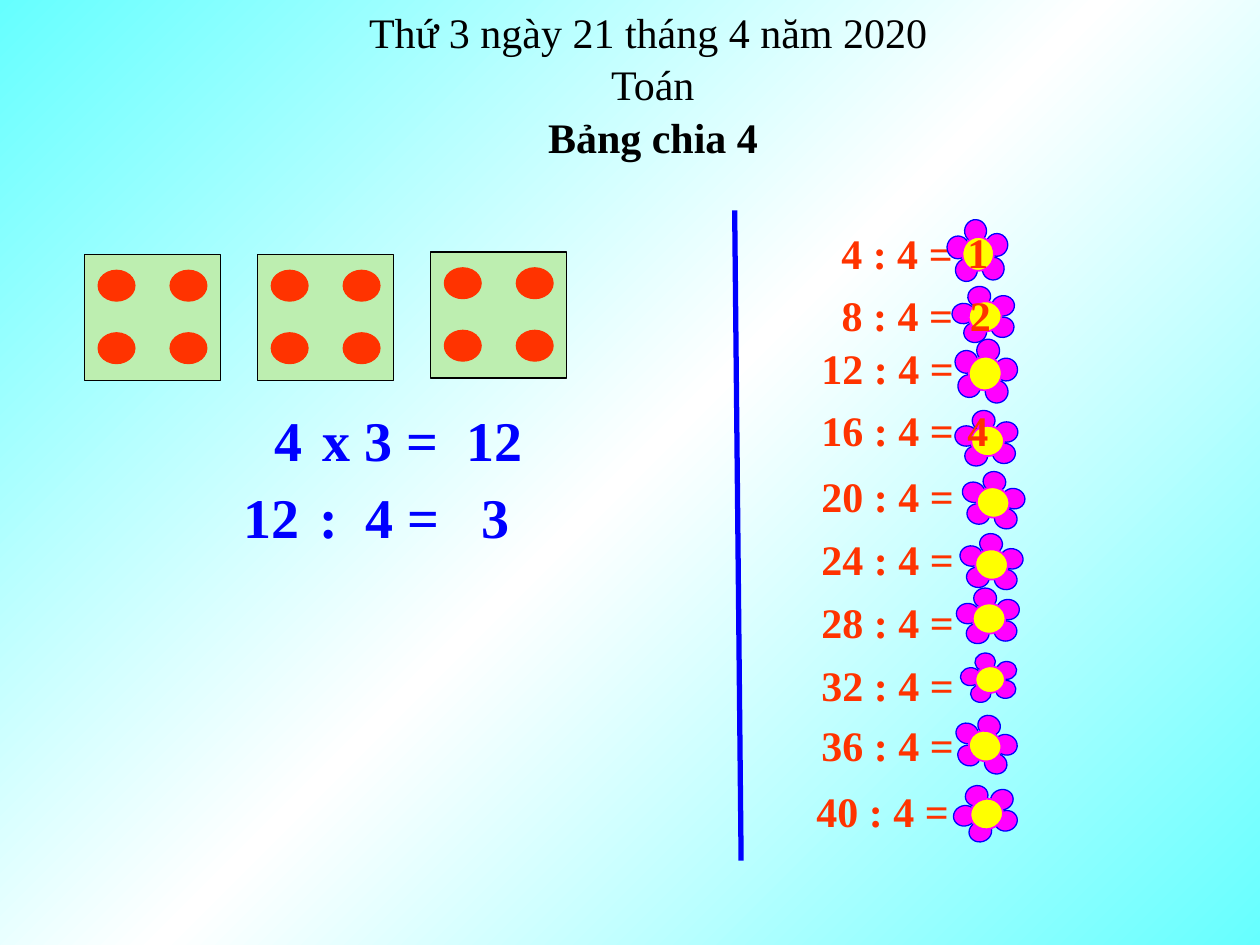
from copy import deepcopy
from dataclasses import dataclass
from itertools import product
from math import cos, radians, sin

from pptx import Presentation
from pptx.dml.color import RGBColor as Rgb
from pptx.enum.shapes import MSO_CONNECTOR as Link, MSO_SHAPE as Kind
from pptx.enum.text import MSO_AUTO_SIZE as Fit, PP_ALIGN as Align
from pptx.oxml.ns import qn
from pptx.oxml.xmlchemy import OxmlElement as Node
from pptx.util import Cm, Pt

HUES = {
    "aqua": "66FFFF", "white": "FFFFFF", "black": "000000", "blue": "0000FF",
    "red": "FF3300", "pink": "FF00FF", "yellow": "FFFF00", "green": "BDEEB0",
}
FONT = "Times New Roman"
PETALS = [(0.38, -0.18), (0.33, 0.25), (-0.08, -0.41), (-0.43, -0.1), (-0.23, 0.3)]


@dataclass
class Label:
    text: str
    left: float
    top: float
    width: float
    hue: str = "red"
    size: int = 24
    bold: bool = True
    wrap: bool = False
    tall: float = 1.27
    align: Align = Align.LEFT
    tail: str = ""  # follows the text after a narrow gap


@dataclass
class Flower:
    x: float
    y: float
    turn: float = 0
    wide: float = 1
    high: float = 1


@dataclass
class Card:
    left: float
    top: float


def tint(name: str) -> Rgb:
    return Rgb.from_string(HUES[name])


def write(slide, item: Label) -> None:
    box = slide.shapes.add_textbox(
        Cm(item.left), Cm(item.top), Cm(item.width), Cm(item.tall))
    frame = box.text_frame
    for key, val in {"word_wrap": item.wrap, "auto_size": Fit.SHAPE_TO_FIT_TEXT}.items():
        setattr(frame, key, val)
    para = frame.paragraphs[0]
    para.alignment = item.align
    parts = [(item.text, item.size)]
    if item.tail:
        parts += [(" ", 14), (item.tail, item.size)]
    for text, size in parts:
        run = para.add_run()
        run.text = text
        style = {"name": FONT, "size": Pt(size), "bold": item.bold}
        for key, val in style.items():
            setattr(run.font, key, val)
        run.font.color.rgb = tint(item.hue)


def block(group, kind: Kind, left: float, top: float, width: float, tall: float,
          fill: str, edge: str, line: float = 0.75, turn: float = 0) -> None:
    shape = group.shapes.add_shape(kind, Cm(left), Cm(top), Cm(width), Cm(tall))
    shape.shadow.inherit = False
    shape.rotation = turn
    shape.fill.solid()
    shape.fill.fore_color.rgb = tint(fill)
    shape.line.color.rgb = tint(edge)
    shape.line.width = Pt(line)


def bloom(slide, item: Flower) -> None:
    group = slide.shapes.add_group_shape()
    c, s = cos(radians(item.turn)), sin(radians(item.turn))

    def disc(dx: float, dy: float, width: float, tall: float, *look) -> None:
        dx, dy = dx * item.wide, dy * item.high
        width, tall = width * item.wide, tall * item.high
        x, y = item.x + dx * c - dy * s, item.y + dx * s + dy * c
        block(group, Kind.OVAL, x - width / 2, y - tall / 2, width, tall,
              *look, turn=item.turn)

    for dx, dy in PETALS:
        disc(dx, dy, 0.46, 0.41, "pink", "blue")
    disc(0, 0, 0.66, 0.61, "yellow", "pink", 1)


def deal(slide, item: Card) -> None:
    group = slide.shapes.add_group_shape()
    block(group, Kind.RECTANGLE, item.left, item.top, 2.74, 2.54, "green", "black")
    for dx, dy in product((0.28, 1.73), (0.32, 1.58)):
        block(group, Kind.OVAL, item.left + dx, item.top + dy, 0.74, 0.62, "red", "red")


def paint(slide) -> None:
    fill = slide.background.fill
    fill.gradient()
    fill.gradient_angle = 315
    stops = slide._element.find(".//" + qn("a:gsLst"))
    stops.append(deepcopy(stops[-1]))
    for stop, pos, hue in zip(fill.gradient_stops, (0, 0.5, 1), ("aqua", "white", "aqua")):
        stop.position = pos
        stop.color.rgb = tint(hue)


def rule(slide, x1: float, y1: float, x2: float, y2: float) -> None:
    line = slide.shapes.add_connector(Link.STRAIGHT, Cm(x1), Cm(y1), Cm(x2), Cm(y2))
    line.line.color.rgb = tint("blue")
    line.line.width = Pt(3)
    line._element.spPr.append(Node("a:effectLst"))


# Division table
SUMS = [
    Label("4 : 4 =", 16.71, 4.47, 2.97, wrap=True),
    Label("8 : 4 = ", 16.64, 5.72, 2.9, wrap=True, align=Align.CENTER),
] + [
    Label(f"{4 * n} : 4 =", left, top, 3.43)
    for n, left, top in [(3, 16.31, 6.78), (4, 16.31, 8.03), (5, 16.31, 9.36),
                         (6, 16.31, 10.63), (7, 16.31, 11.9), (8, 16.31, 13.17),
                         (9, 16.31, 14.38), (10, 16.21, 15.71)]
]
# Answers on the flowers
FOUND = [
    Label(str(n), left, top, 1.14)
    for n, left, top in [(1, 19.25, 4.45), (2, 19.3, 5.72), (4, 19.25, 8.03)]
]
FLOWERS = [
    Flower(19.72, 5.12, 2.9, 0.96, 1.12), Flower(19.86, 6.38, -5.4),
    Flower(19.86, 7.53, 17.3, 1, 1.12), Flower(19.91, 8.89),
    Flower(20.02, 10.13, 14.7), Flower(19.99, 11.38, 9.6),
    Flower(19.94, 12.47), Flower(19.96, 13.7, -4.3, 0.9, 0.88),
    Flower(19.86, 15.04, 22), Flower(19.89, 16.41, -17.8),
]
HEADS = [
    Label("Thứ 3 ngày 21 tháng 4 năm 2020", 7.19, 0, 11.86, "black", bold=False),
    Label("Toán", 12.07, 1.05, 2.21, "black", bold=False),
    Label("Bảng chia 4", 10.8, 2.12, 4.78, "black"),
]
FACTS = [
    Label("4 ", 5.28, 8.05, 5.72, "blue", 32, wrap=True, tall=1.63, tail="x 3 =  12"),
    Label("12 ", 4.65, 9.6, 6.15, "blue", 32, wrap=True, tall=1.63, tail=":  4 =   3"),
]
CARDS = [Card(1.7, 5.13), Card(5.19, 5.13), Card(8.68, 5.08)]


def main() -> None:
    deck = Presentation()
    deck.slide_width, deck.slide_height = Cm(25.4), Cm(19.05)
    slide = deck.slides.add_slide(deck.slide_layouts[6])
    paint(slide)
    rule(slide, 14.81, 4.24, 14.94, 17.35)
    for draw, items in [(write, SUMS + HEADS), (bloom, FLOWERS),
                        (write, FOUND + FACTS), (deal, CARDS)]:
        for item in items:
            draw(slide, item)
    deck.save("out.pptx")


if __name__ == "__main__":
    main()
